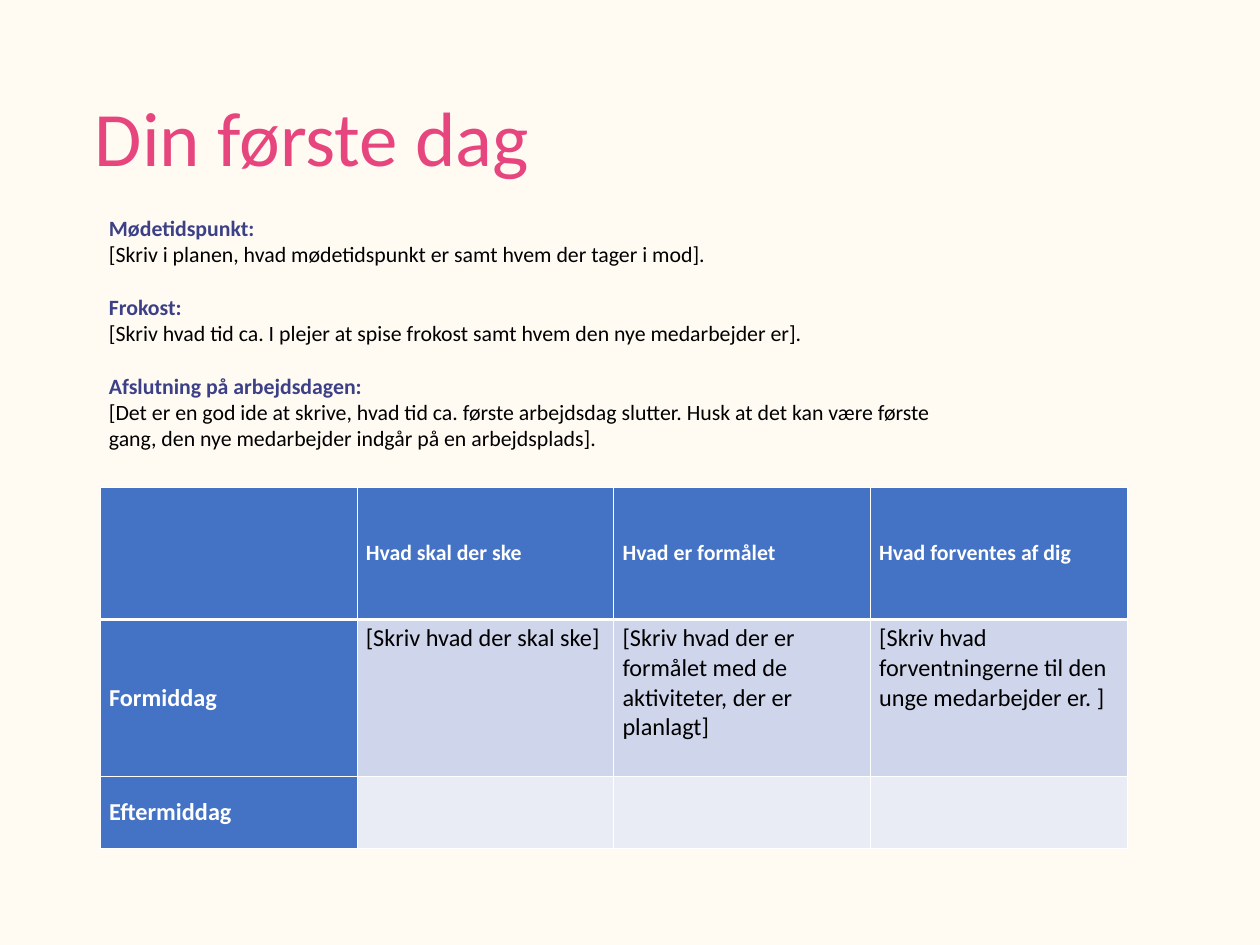
"""Build the slide that plans a new employee's first day."""
from lxml import etree
from pptx import Presentation
from pptx.dml.color import RGBColor
from pptx.enum.text import MSO_ANCHOR
from pptx.oxml.ns import qn
from pptx.util import Pt

TOP, MIDDLE = MSO_ANCHOR.TOP, MSO_ANCHOR.MIDDLE
FONT = "Calibri"
COLOURS = {
    "background": "FFFAF2",
    "title": "E6467D",
    "heading": "3C4187",
    "body": "000000",
    "white": "FFFFFF",
    "header": "4472C4",
    "band_dark": "CFD5EA",
    "band_light": "E9EBF5",
}
TITLE = "Din første dag"
SECTIONS = [
    ("Mødetidspunkt:",
     "[Skriv i planen, hvad mødetidspunkt er samt hvem der tager i mod]."),
    ("Frokost:",
     "[Skriv hvad tid ca. I plejer at spise frokost samt hvem den nye medarbejder er]."),
    ("Afslutning på arbejdsdagen:",
     "[Det er en god ide at skrive, hvad tid ca. første arbejdsdag slutter. "
     "Husk at det kan være første gang, den nye medarbejder indgår på en arbejdsplads]."),
]
PLAN = [
    ["", "Hvad skal der ske", "Hvad er formålet", "Hvad forventes af dig"],
    ["Formiddag", "[Skriv hvad der skal ske]",
     "[Skriv hvad der er formålet med de aktiviteter, der er planlagt]",
     "[Skriv hvad forventningerne til den unge medarbejder er. ]"],
    ["Eftermiddag", "", "", ""],
]
BANDS = ["header", "band_dark", "band_light"]
ROW_HEIGHTS = [108.5, 129.5, 59.5]
COLUMN_WIDTH = 211.85
CONTENT_LEFT = 82.8
SECTION_GAP = 22


def colour(name):
    return RGBColor.from_string(COLOURS[name])


def write(para, text, size, name, bold=False):
    para.text = text
    for span in para.runs:
        span.font.name = FONT
        span.font.size = Pt(size)
        span.font.bold = bold
        span.font.color.rgb = colour(name)


def add_box(page, left, top, width, height, anchor):
    box = page.shapes.add_textbox(Pt(left), Pt(top), Pt(width), Pt(height))
    frame = box.text_frame
    frame.word_wrap = True
    frame.vertical_anchor = anchor
    return frame


def add_borders(cell, widths):
    properties = cell._tc.get_or_add_tcPr()
    for side, width in zip("LRTB", widths):
        line = etree.SubElement(properties, qn(f"a:ln{side}"), w=str(Pt(width)))
        fill = etree.SubElement(line, qn("a:solidFill"))
        etree.SubElement(fill, qn("a:srgbClr"), val=COLOURS["white"])


def add_title(page):
    frame = add_box(page, 71.3, 41.8, 897, 150.5, MIDDLE)
    para = frame.paragraphs[0]
    para.line_spacing = 0.9
    write(para, TITLE, 63.5, "title")


def add_sections(page):
    frame = add_box(page, CONTENT_LEFT, 173.5, 725, 203.8, TOP)
    for index, (heading, body) in enumerate(SECTIONS):
        para = frame.add_paragraph() if index else frame.paragraphs[0]
        para.space_before = Pt(SECTION_GAP if index else 0)
        write(para, heading, 18, "heading", bold=True)
        write(frame.add_paragraph(), body, 18, "body")


def add_plan(page):
    columns = len(PLAN[0])
    table = page.shapes.add_table(
        len(PLAN), columns, Pt(CONTENT_LEFT), Pt(402.5),
        Pt(COLUMN_WIDTH * columns), Pt(sum(ROW_HEIGHTS))).table
    table.first_col = True
    for column in table.columns:
        column.width = Pt(COLUMN_WIDTH)
    for row, texts in enumerate(PLAN):
        table.rows[row].height = Pt(ROW_HEIGHTS[row])
        for column, text in enumerate(texts):
            cell = table.cell(row, column)
            label = row == 0 or column == 0
            add_borders(cell, (1, 1, 3 if row == 1 else 1, 3 if row == 0 else 1))
            cell.fill.solid()
            cell.fill.fore_color.rgb = colour("header" if label else BANDS[row])
            cell.vertical_anchor = MIDDLE if label else TOP
            write(cell.text_frame.paragraphs[0], text, 20 if row else 18,
                  "white" if label else "body", bold=label)


def main():
    deck = Presentation()
    deck.slide_width, deck.slide_height = Pt(1039.68), Pt(779.76)
    page = deck.slides.add_slide(deck.slide_layouts[6])
    page.background.fill.solid()
    page.background.fill.fore_color.rgb = colour("background")
    add_title(page)
    add_plan(page)
    add_sections(page)
    deck.save("out.pptx")


if __name__ == "__main__":
    main()
